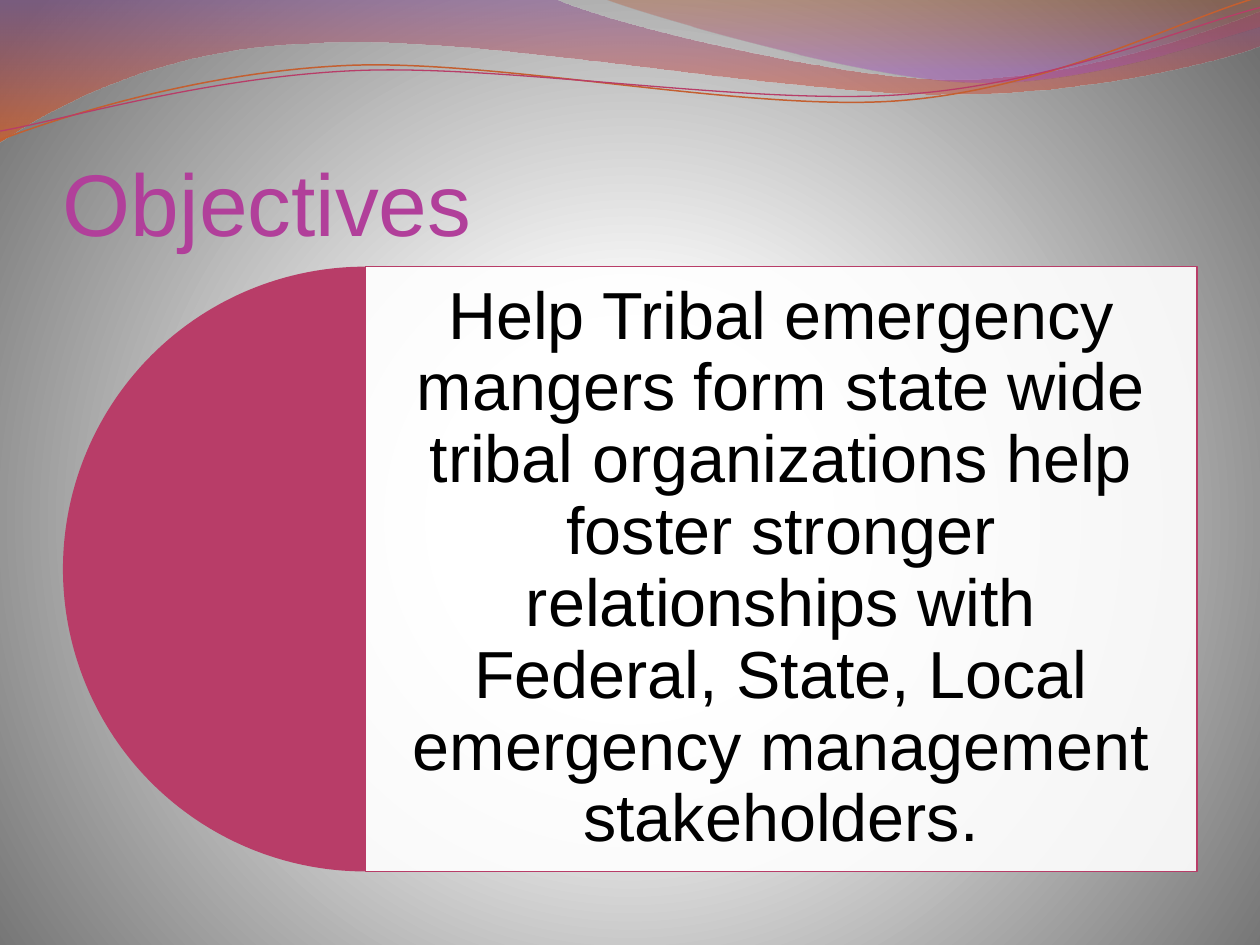
from lxml import etree
from pptx import Presentation
from pptx.dml.color import RGBColor
from pptx.enum import shapes, text
from pptx.oxml import parse_xml
from pptx.oxml.ns import nsdecls, qn
from pptx.util import Pt

ROSE = RGBColor(0xB8, 0x3D, 0x68)
ORANGE = RGBColor(0xC4, 0x5F, 0x30)
MAGENTA = RGBColor(0xB1, 0x3F, 0x9A)
WHITE = RGBColor(0xFF, 0xFF, 0xFF)
BLACK = RGBColor(0x00, 0x00, 0x00)
GREY = RGBColor(0x70, 0x70, 0x70)
PURPLE = RGBColor(0x83, 0x45, 0x91)
BRIGHT_ORANGE = RGBColor(0xF3, 0x53, 0x07)
BROWN = RGBColor(0xB7, 0x49, 0x15)
VIOLET = RGBColor(0xA1, 0x4B, 0xB4)
DOWNWARD = '<a:lin ang="5400000" scaled="1"/>'
RADIAL = ('<a:path path="circle">'
          '<a:fillToRect l="10000" t="110000" r="10000" b="100000"/></a:path>')


def set_gradient(fill, element, stops, direction):
    """Swap a solid fill for stops of (percent, colour, opacity)."""
    fill.solid()
    solid = next(element.iter(qn("a:solidFill")))
    stop_xml = "".join(
        f'<a:gs pos="{pos * 1000}"><a:srgbClr val="{colour}">'
        f'<a:alpha val="{opacity * 1000}"/></a:srgbClr></a:gs>'
        for pos, colour, opacity in stops)
    solid.getparent().replace(solid, parse_xml(
        f'<a:gradFill {nsdecls("a")} rotWithShape="1"><a:gsLst>{stop_xml}</a:gsLst>'
        f'{direction}</a:gradFill>'))


prs = Presentation()
prs.slide_width, prs.slide_height = Pt(720), Pt(540)
slide = prs.slides.add_slide(prs.slide_layouts[6])

# Background
set_gradient(slide.background.fill, slide.element,
             [(0, WHITE, 100), (25, WHITE, 100), (100, GREY, 100)], RADIAL)

# Waves: a pair is the end of a straight segment, six numbers a Bezier curve
waves = [
    ([(0, 0), (316.8, -0.7),
      (342.7, 12.2, 478.1, 45.4, 545.8, 45.4),
      (614.2, 45.4, 689.8, 18.7, 720, 6.5),
      (720.7, 25.9),
      (707.8, 31.7, 626.4, 54.7, 537.1, 54),
      (446.4, 54, 275, 20.2, 185, 24.5),
      (92.9, 25.9, 33.1, 59.8, -0.7, 81.4)],
     [(0, PURPLE, 45), (100, BRIGHT_ORANGE, 55)], None),
    ([(344.9, -0.7),
      (366.5, 7.9, 491, 44.6, 553.7, 46.8),
      (616.3, 49.7, 691.9, 23, 720, 15.1),
      (720, 0)],
     [(0, BROWN, 30), (80, VIOLET, 45)], None),
    ([(0, 79.9),
      (34.6, 67, 113.8, 41, 199.4, 37.4),
      (284.4, 33.8, 427, 64.1, 513.4, 57.6),
      (599.8, 51.1, 675.4, 10.8, 718.6, -1.4)],
     None, (ORANGE, 0.85)),
    ([(0, 74.9),
      (33.8, 69.1, 118.1, 43.9, 203.8, 40.3),
      (290.2, 36.7, 429.8, 60.5, 516.2, 54),
      (601.9, 48.2, 677.5, 15.1, 720, 4.3)],
     None, (ROSE, 0.75)),
]
for (start, *segments), stops, stroke in waves:
    points = [(Pt(segment[i]), Pt(segment[i + 1]))
              for segment in segments for i in range(0, len(segment), 2)]
    builder = slide.shapes.build_freeform(Pt(start[0]), Pt(start[1]))
    builder.add_line_segments(points, close=stops is not None)
    wave = builder.convert_to_shape()
    wave.shadow.inherit = False

    # Join each three control points into one curve
    steps = iter(list(wave.element.iter(qn("a:lnTo"))))
    for segment in segments:
        first = next(steps)
        if len(segment) == 6:
            curve = etree.Element(qn("a:cubicBezTo"))
            first.addprevious(curve)
            for step in (first, next(steps), next(steps)):
                curve.append(step[0])
                step.getparent().remove(step)

    if stops:
        set_gradient(wave.fill, wave.element, stops, DOWNWARD)
        wave.line.fill.background()
    else:
        wave.fill.background()
        wave.line.color.rgb, wave.line.width = stroke[0], Pt(stroke[1])

# Half disc
half_disc = slide.shapes.add_shape(shapes.MSO_SHAPE.PIE,
                                   Pt(36), Pt(152.4), Pt(345.6), Pt(345.6))
half_disc.adjustments[0], half_disc.adjustments[1] = 54, 162
half_disc.shadow.inherit = False
half_disc.fill.solid()
half_disc.fill.fore_color.rgb = ROSE
half_disc.line.fill.background()

# Objective panel
panel = slide.shapes.add_shape(shapes.MSO_SHAPE.RECTANGLE,
                               Pt(208.8), Pt(152.4), Pt(475.2), Pt(345.6))
panel.shadow.inherit = False
panel.fill.solid()
panel.fill.fore_color.rgb = WHITE
panel_colour = next(panel.element.iter(qn("a:srgbClr")))
etree.SubElement(panel_colour, qn("a:alpha"), val="90000")
panel.line.color.rgb, panel.line.width = ROSE, Pt(0.75)

# Title and objective text
title = slide.shapes.add_textbox(Pt(36), Pt(55.4), Pt(648), Pt(90))
objective = slide.shapes.add_textbox(panel.left, panel.top, panel.width, panel.height)
for box, words, size, colour, anchor, align, insets in [
    (title, "Objectives", 50, MAGENTA, text.MSO_ANCHOR.BOTTOM,
     text.PP_ALIGN.LEFT, (0, 3.6, 0, 0)),
    (objective, "Help Tribal emergency mangers form state wide tribal organizations "
     "help foster stronger relationships with Federal, State, Local emergency "
     "management stakeholders.", 38, BLACK, text.MSO_ANCHOR.MIDDLE,
     text.PP_ALIGN.CENTER, (21.6, 11.5, 21.6, 11.5)),
]:
    frame = box.text_frame
    frame.word_wrap = True
    frame.vertical_anchor = anchor
    (frame.margin_left, frame.margin_top,
     frame.margin_right, frame.margin_bottom) = map(Pt, insets)
    paragraph = frame.paragraphs[0]
    paragraph.text = words
    paragraph.alignment = align
    paragraph.font.name, paragraph.font.size = "Arial", Pt(size)
    paragraph.font.color.rgb = colour
objective.text_frame.paragraphs[0].line_spacing = 0.9

prs.save("out.pptx")
